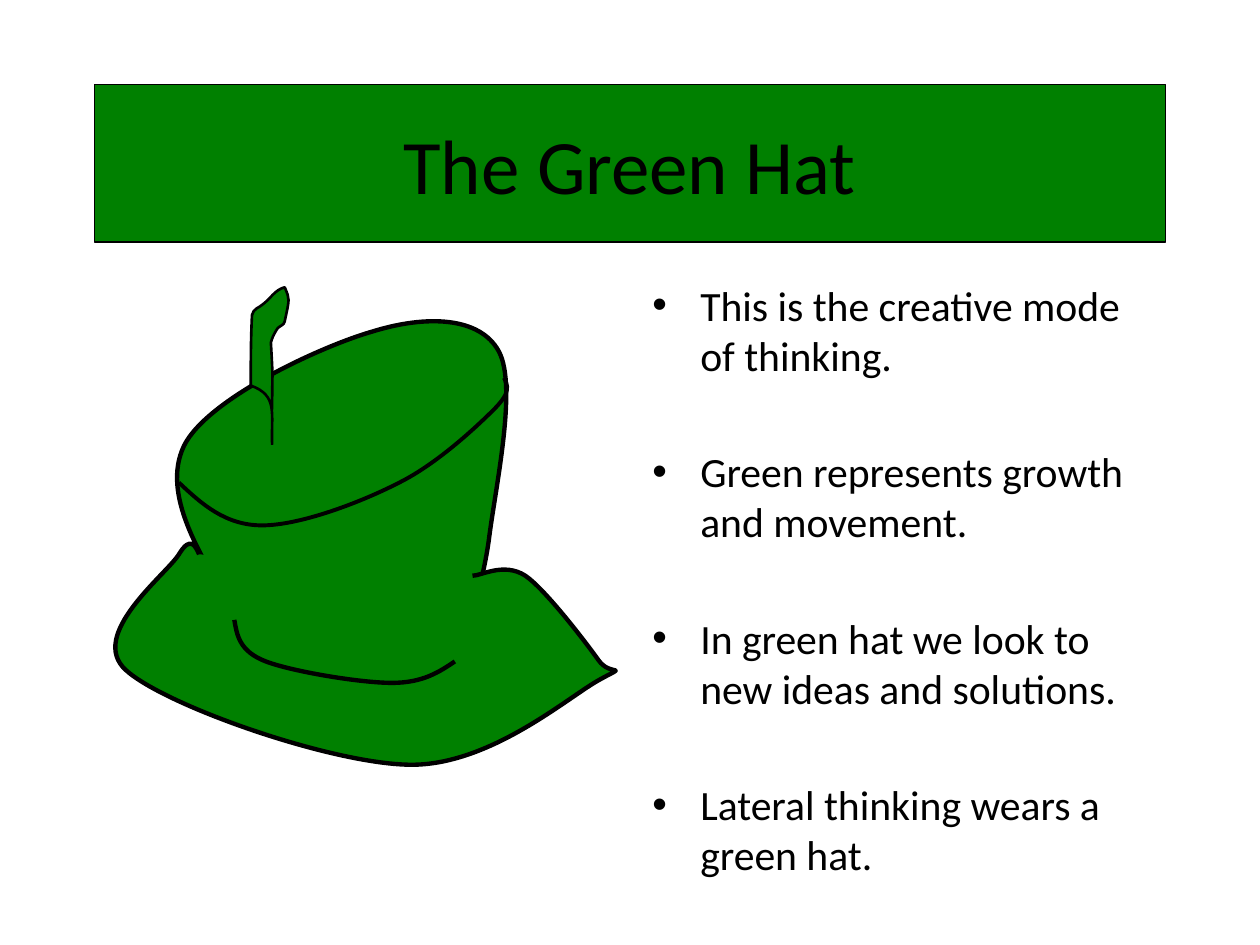
from dataclasses import dataclass

from lxml import etree
from pptx import Presentation
from pptx.dml.color import RGBColor
from pptx.enum import shapes, text
from pptx.oxml import ns
from pptx.util import Inches, Pt

GREEN = RGBColor(0x00, 0x80, 0x00)
BLACK = RGBColor(0x00, 0x00, 0x00)
FONT = "Calibri"

Point = tuple[float, float]


@dataclass(frozen=True)
class HatPart:
    """An open outline: a start, then Bezier curves of two controls and an end."""
    start: Point
    curves: list[tuple[float, ...]]
    line_width: float = 2.5
    filled: bool = True


CROWN = HatPart((1.88, 4.88), [
    (1.58, 4.4, 1.28, 3.92, 1.46, 3.54),
    (1.64, 3.17, 2.54, 2.75, 2.96, 2.63),
    (3.38, 2.5, 3.81, 2.51, 3.96, 2.79),
    (4.11, 3.07, 3.93, 3.88, 3.88, 4.29),
    (3.82, 4.71, 3.67, 5.11, 3.62, 5.29),
])
BRIM = HatPart((1.58, 4.4), [
    (1.55, 4.33, 1.51, 4.25, 1.42, 4.4),
    (1.32, 4.56, 0.69, 5.04, 1, 5.32),
    (1.31, 5.6, 2.62, 6.06, 3.25, 6.07),
    (3.88, 6.08, 4.5, 5.54, 4.75, 5.4),
    (5, 5.26, 4.85, 5.38, 4.75, 5.24),
    (4.65, 5.1, 4.33, 4.68, 4.17, 4.57),
    (4, 4.46, 3.82, 4.57, 3.75, 4.57),
])
BAND = HatPart((1.86, 4.92), [
    (1.88, 5.04, 1.9, 5.17, 2.11, 5.25),
    (2.32, 5.33, 2.86, 5.42, 3.11, 5.42),
    (3.36, 5.42, 3.49, 5.33, 3.61, 5.25),
])
TOP_EDGE = HatPart((1.42, 3.83), [
    (1.6, 4, 1.79, 4.17, 2.08, 4.17),
    (2.38, 4.17, 2.86, 3.99, 3.17, 3.83),
    (3.47, 3.68, 3.78, 3.39, 3.92, 3.25),
    (4.06, 3.11, 4.03, 3.06, 4, 3),
], line_width=2.25, filled=False)
STEM = HatPart((2.16, 3.53), [
    (2.15, 3.28, 2.21, 3.14, 1.99, 3.06),
    (1.99, 2.87, 1.99, 2.69, 2, 2.5),
    (2.01, 2.45, 2.06, 2.44, 2.08, 2.42),
    (2.15, 2.37, 2.18, 2.3, 2.26, 2.28),
    (2.3, 2.38, 2.3, 2.36, 2.26, 2.55),
    (2.26, 2.58, 2.21, 2.59, 2.2, 2.61),
    (2.17, 2.66, 2.16, 2.68, 2.15, 2.72),
    (2.17, 3.07, 2.16, 2.9, 2.16, 3.25),
], line_width=1.5)
HAT = [CROWN, BRIM, BAND, TOP_EDGE, STEM]

IDEAS = [
    "This is the creative mode of thinking.",
    "Green represents growth and movement.",
    "In green hat we look to new ideas and solutions.",
    "Lateral thinking wears a green hat.",
]


def style(shape, line_width: float, filled: bool = True) -> None:
    shape.shadow.inherit = False
    if filled:
        shape.fill.solid()
        shape.fill.fore_color.rgb = GREEN
    else:
        shape.fill.background()
    shape.line.color.rgb = BLACK
    shape.line.width = Pt(line_width)


def bend_segments(outline) -> None:
    """Turn every three straight segments into one cubic Bezier curve."""
    segments = list(outline._element.iter(ns.qn("a:lnTo")))
    for first in range(0, len(segments), 3):
        bend = etree.Element(ns.qn("a:cubicBezTo"))
        segments[first].addprevious(bend)
        for segment in segments[first:first + 3]:
            bend.append(segment[0])
            segment.getparent().remove(segment)


def draw_hat_part(group, part: HatPart) -> None:
    builder = group.shapes.build_freeform(*map(Inches, part.start))
    points = [(Inches(x), Inches(y)) for curve in part.curves
              for x, y in zip(curve[::2], curve[1::2])]
    builder.add_line_segments(points, close=False)
    outline = builder.convert_to_shape()
    bend_segments(outline)
    style(outline, part.line_width, part.filled)


def add_run(paragraph, wording: str, size: float) -> None:
    run = paragraph.add_run()
    run.text = wording
    run.font.name = FONT
    run.font.size = Pt(size)
    run.font.color.rgb = BLACK


def add_bullet(paragraph) -> None:
    properties = paragraph._p.get_or_add_pPr()
    properties.set("marL", str(Inches(0.38)))
    properties.set("indent", str(Inches(-0.38)))
    etree.SubElement(properties, ns.qn("a:buFont"), typeface="Arial")
    etree.SubElement(properties, ns.qn("a:buChar"), char="•")


def draw_title(slide) -> None:
    banner = slide.shapes.add_shape(shapes.MSO_SHAPE.RECTANGLE, Inches(0.75), Inches(0.67),
                                    Inches(8.5), Inches(1.25))
    style(banner, 0.75)
    banner.text_frame.vertical_anchor = text.MSO_ANCHOR.MIDDLE
    heading = banner.text_frame.paragraphs[0]
    heading.alignment = text.PP_ALIGN.CENTER
    add_run(heading, "The Green Hat", 44)


def draw_ideas(slide) -> None:
    frame = slide.shapes.add_textbox(Inches(5.08), Inches(2.17),
                                     Inches(4.17), Inches(4.5)).text_frame
    frame.word_wrap = True
    for index, idea in enumerate(IDEAS):
        paragraph = frame.add_paragraph() if index else frame.paragraphs[0]
        if index:
            paragraph.space_before = Pt(38)
        add_bullet(paragraph)
        add_run(paragraph, idea, 23.8)


def main() -> None:
    deck = Presentation()
    deck.slide_width, deck.slide_height = Inches(10), Inches(7.5)
    slide = deck.slides.add_slide(deck.slide_layouts[6])
    draw_title(slide)
    draw_ideas(slide)
    hat = slide.shapes.add_group_shape()
    for part in HAT:
        draw_hat_part(hat, part)
    deck.save("out.pptx")


if __name__ == "__main__":
    main()
